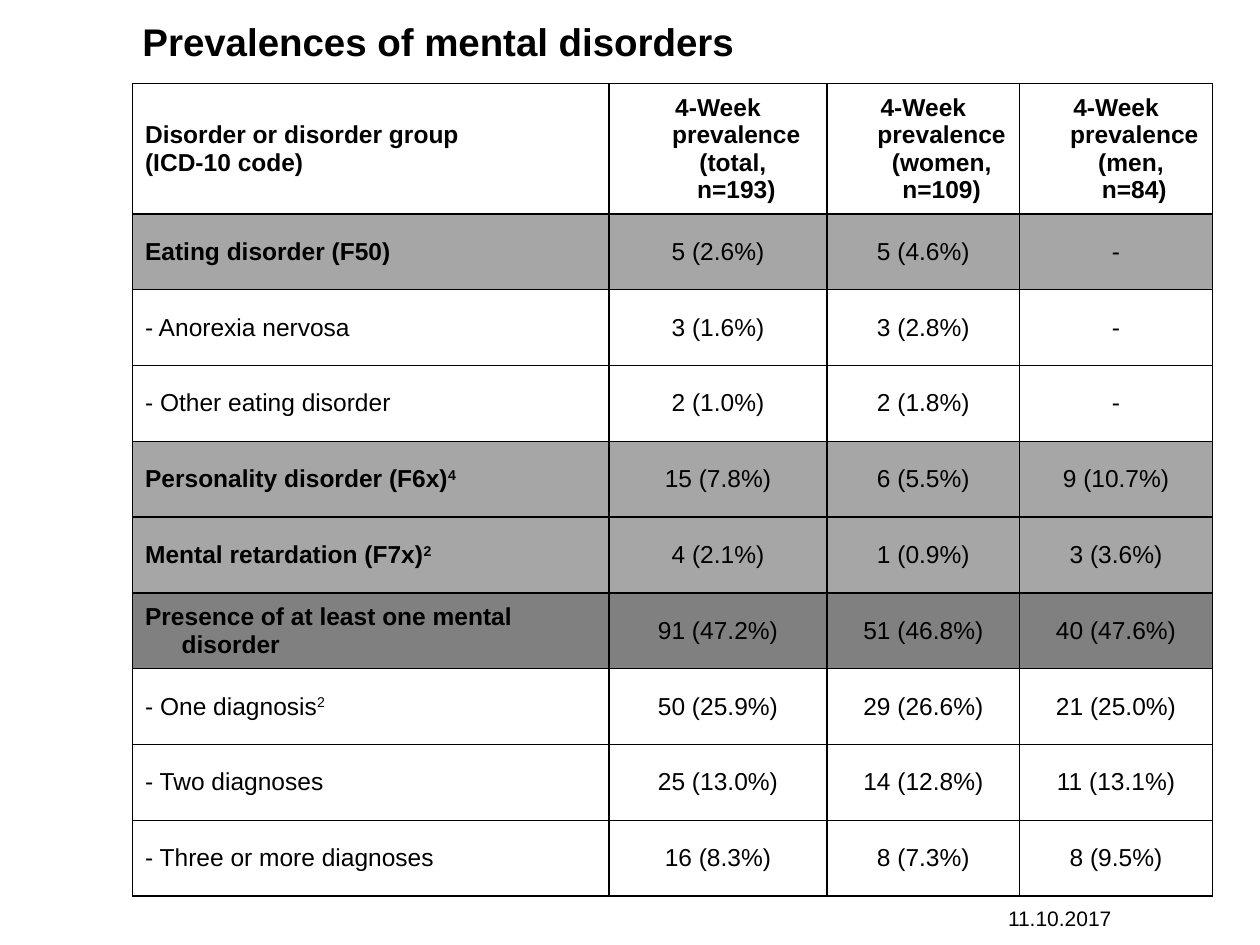
import pptx
import pptx.dml.color
import pptx.enum.text
import pptx.oxml
import pptx.oxml.ns
import pptx.util

Pt = pptx.util.Pt
ALIGN = pptx.enum.text.PP_ALIGN
ANCHOR = pptx.enum.text.MSO_ANCHOR
BLACK, LIGHT, DARK = "000000", "A6A6A6", "808080"
HANGING = 20.88
COLUMN_WIDTHS = [272.3, 124.6, 110.1, 110.1]
HEADER_HEIGHT, ROW_HEIGHT = 74.3, 43.33

HEADERS = [
    "Disorder or disorder group\n(ICD-10 code)",
    "4-Week prevalence (total, \vn=193)",
    "4-Week prevalence (women, n=109)",
    "4-Week prevalence (men, \vn=84)",
]
ROWS = [
    ("Eating disorder (F50)", "", LIGHT, "5 (2.6%)", "5 (4.6%)", "-"),
    ("- Anorexia nervosa", "", None, "3 (1.6%)", "3 (2.8%)", "-"),
    ("- Other eating disorder", "", None, "2 (1.0%)", "2 (1.8%)", "-"),
    ("Personality disorder (F6x)", "4", LIGHT, "15 (7.8%)", "6 (5.5%)", "9 (10.7%)"),
    ("Mental retardation (F7x)", "2", LIGHT, "4 (2.1%)", "1 (0.9%)", "3 (3.6%)"),
    ("Presence of at least one mental disorder", "", DARK,
     "91 (47.2%)", "51 (46.8%)", "40 (47.6%)"),
    ("- One diagnosis", "2", None, "50 (25.9%)", "29 (26.6%)", "21 (25.0%)"),
    ("- Two diagnoses", "", None, "25 (13.0%)", "14 (12.8%)", "11 (13.1%)"),
    ("- Three or more diagnoses", "", None, "16 (8.3%)", "8 (7.3%)", "8 (9.5%)"),
]


def color(code):
    return pptx.dml.color.RGBColor.from_string(code)


def format_paragraph(para, size, bold=False, align=ALIGN.LEFT, hanging=0):
    properties = para._p.get_or_add_pPr()
    properties.set("marL", str(int(Pt(hanging))))
    properties.set("indent", str(-int(Pt(hanging))))
    para.alignment = align
    para.space_before = Pt(0)
    font = para.font
    font.name, font.size, font.bold = "Arial", Pt(size), bold
    font.color.rgb = color(BLACK)


def add_borders(cell):
    properties = cell._tc.get_or_add_tcPr()
    namespace = pptx.oxml.ns.nsdecls("a")
    for side in ("lnL", "lnR", "lnT", "lnB"):
        properties.append(pptx.oxml.parse_xml(
            f'<a:{side} {namespace} w="{int(Pt(1))}"><a:solidFill>'
            f'<a:srgbClr val="{BLACK}"/></a:solidFill></a:{side}>'))


def fill_cell(cell, text, bold, align, shade=None, superscript=""):
    cell.text = text
    cell.vertical_anchor = ANCHOR.MIDDLE
    cell.margin_left = cell.margin_right = Pt(7.2)
    cell.margin_top = cell.margin_bottom = Pt(3.6)
    add_borders(cell)
    if shade:
        cell.fill.solid()
        cell.fill.fore_color.rgb = color(shade)
    else:
        cell.fill.background()
    for para in cell.text_frame.paragraphs:
        format_paragraph(para, 14, bold, align, HANGING)
    if superscript:
        span = cell.text_frame.paragraphs[0].add_run()
        span.text = superscript
        span._r.get_or_add_rPr().set("baseline", "30000")


def add_prevalence_table(page):
    height = HEADER_HEIGHT + ROW_HEIGHT * len(ROWS)
    table = page.shapes.add_table(
        len(ROWS) + 1, len(HEADERS), Pt(75.7), Pt(47.8),
        Pt(sum(COLUMN_WIDTHS)), Pt(height)).table
    table.first_row = table.horz_banding = False
    for column, width in zip(table.columns, COLUMN_WIDTHS):
        column.width = Pt(width)
    for row in table.rows:
        row.height = Pt(ROW_HEIGHT)
    table.rows[0].height = Pt(HEADER_HEIGHT)

    for index, header in enumerate(HEADERS):
        align = ALIGN.CENTER if index else ALIGN.LEFT
        fill_cell(table.cell(0, index), header, True, align)
    for row_index, (label, note, shade, *values) in enumerate(ROWS, 1):
        fill_cell(table.cell(row_index, 0), label, shade is not None,
                  ALIGN.LEFT, shade, note)
        for column_index, value in enumerate(values, 1):
            fill_cell(table.cell(row_index, column_index), value, False,
                      ALIGN.CENTER, shade)


def set_title(page, text):
    title = page.shapes.title
    title.left, title.top, title.width, title.height = Pt(74.2), Pt(3.6), Pt(617), Pt(39.6)
    frame = title.text_frame
    frame.text = text
    frame.word_wrap = True
    frame.auto_size = pptx.enum.text.MSO_AUTO_SIZE.NONE
    frame.vertical_anchor = ANCHOR.MIDDLE
    format_paragraph(frame.paragraphs[0], 22, True, hanging=HANGING)


def add_date(page, text):
    box = page.shapes.add_textbox(Pt(560.2), Pt(514), Pt(82), Pt(17.3))
    frame = box.text_frame
    frame.word_wrap = True
    frame.text = text
    format_paragraph(frame.paragraphs[0], 12, align=ALIGN.RIGHT)


def main():
    deck = pptx.Presentation()
    deck.slide_width, deck.slide_height = Pt(720), Pt(540)
    page = deck.slides.add_slide(deck.slide_layouts[5])
    add_date(page, "11.10.2017")
    add_prevalence_table(page)
    set_title(page, "Prevalences of mental disorders")
    deck.save("out.pptx")


if __name__ == "__main__":
    main()
